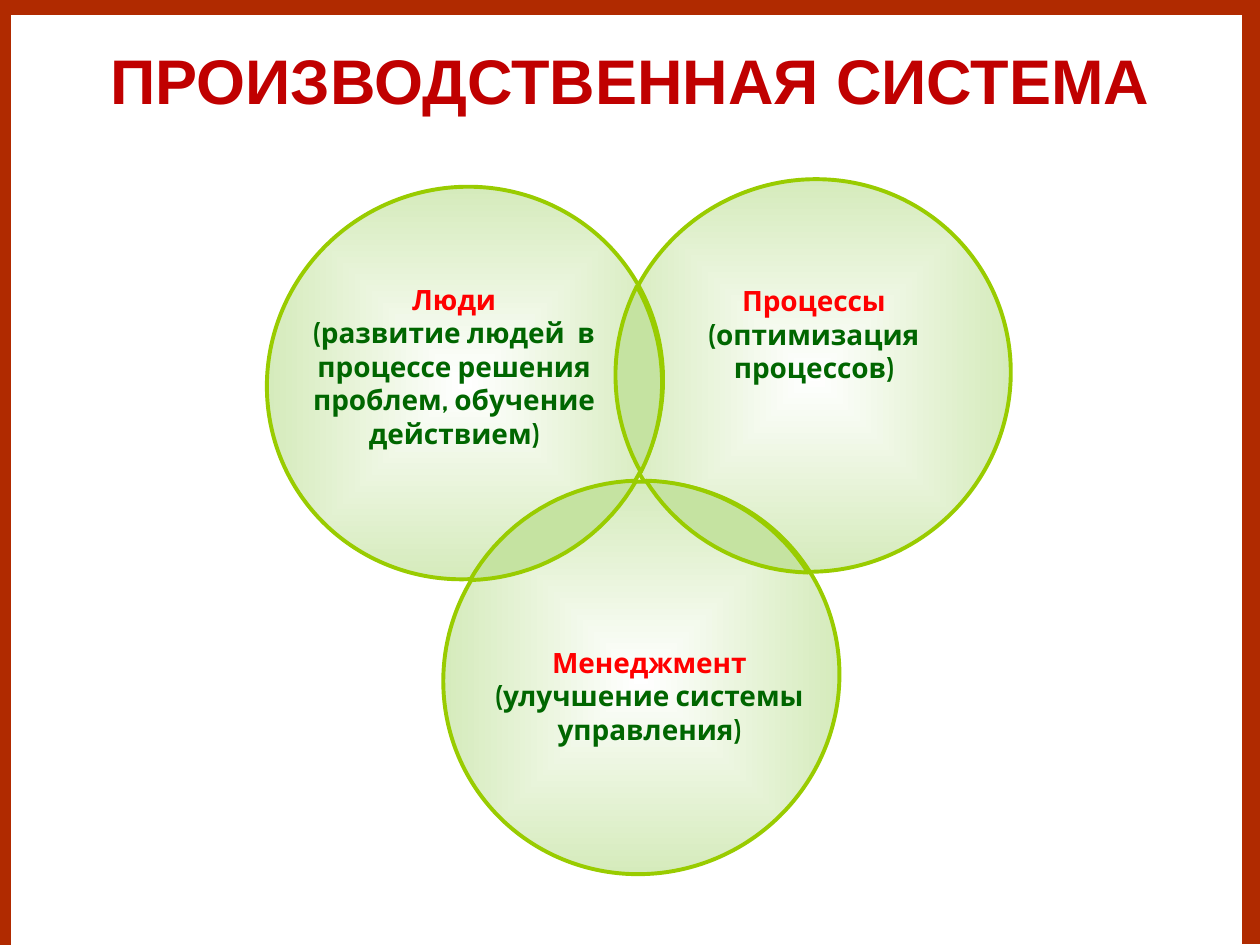
from math import atan2, acos, cos, hypot, pi, sin

from lxml.etree import SubElement
from pptx import Presentation
from pptx.dml.color import RGBColor
from pptx.enum.shapes import MSO_CONNECTOR, MSO_SHAPE
from pptx.enum.text import MSO_ANCHOR, PP_ALIGN
from pptx.oxml import parse_xml
from pptx.oxml.ns import nsdecls, qn
from pptx.util import Inches, Pt

RUST, LIME, PALE = "B02A00", "99CC00", "C5E3A1"
WIDE, HIGH = 3.1, 3.16
STEPS = 20


def color(code):
    return RGBColor.from_string(code)


def arc(near, far):
    """Points of the circle around near that lie inside the one around far."""
    dx, dy = far[0] - near[0], far[1] - near[1]
    rad = (WIDE + HIGH) / 4
    mid, half = atan2(dy, dx), acos(hypot(dx, dy) / 2 / rad)
    turns = [mid - half + 2 * half * i / STEPS for i in range(STEPS)]
    return [(Inches(near[0] + rad * cos(t)), Inches(near[1] + rad * sin(t)))
            for t in turns]


prs = Presentation()
prs.slide_width, prs.slide_height = Inches(10), Inches(7.5)
slide = prs.slides.add_slide(prs.slide_layouts[5])
shapes = slide.shapes

# Frame
for x1, y1, x2, y2 in [(0, 0.05, 10, 0.05), (0.02, 0.08, 0.02, 7.5),
                       (9.93, 0.08, 9.93, 7.49)]:
    edge = shapes.add_connector(MSO_CONNECTOR.STRAIGHT, Inches(x1), Inches(y1),
                                Inches(x2), Inches(y2))
    edge.line.color.rgb = color(RUST)
    edge.line.width = Pt(10)
    SubElement(edge._element.spPr, qn("a:effectLst"))

# Title with a text shadow
title = shapes.title
title.left, title.top = Inches(0), Inches(0.21)
title.width, title.height = Inches(10), Inches(0.84)
frame = title.text_frame
frame.text = "ПРОИЗВОДСТВЕННАЯ СИСТЕМА"
frame.vertical_anchor = MSO_ANCHOR.MIDDLE
frame.paragraphs[0].alignment = PP_ALIGN.CENTER
run = frame.paragraphs[0].runs[0]
run.font.name, run.font.size, run.font.bold = "Arial", Pt(36), True
run.font.color.rgb = color("C00000")
run._r.rPr.find(qn("a:solidFill")).addnext(parse_xml(
    f'<a:effectLst {nsdecls("a")}><a:outerShdw blurRad="38100" dist="38100" '
    'dir="2700000" algn="tl"><a:srgbClr val="000000"><a:alpha val="43000"/>'
    '</a:srgbClr></a:outerShdw></a:effectLst>'))

# Circles, by centre
right, left, low = (6.45, 2.98), (3.69, 3.04), (5.09, 5.38)
for x, y in (right, left, low):
    disc = shapes.add_shape(MSO_SHAPE.OVAL, Inches(x - WIDE / 2),
                            Inches(y - HIGH / 2), Inches(WIDE), Inches(HIGH))
    disc.rotation = 59.2
    disc.shadow.inherit = False
    disc.fill.gradient()
    for stop, code in zip(disc.fill.gradient_stops, ("FFFFFF", PALE)):
        stop.color.rgb = color(code)
    grad = disc._element.spPr.find(qn("a:gradFill"))
    grad.set("rotWithShape", "0")
    grad.replace(grad.find(qn("a:lin")), parse_xml(
        f'<a:path {nsdecls("a")} path="shape"><a:fillToRect l="50000" '
        't="50000" r="50000" b="50000"/></a:path>'))
    disc.line.color.rgb = color(LIME)
    disc.line.width = Pt(2.25)

# Labels
labels = [
    (2.12, 2.23, 2.97, 1.35, "Люди",
     "(развитие людей  в процессе решения проблем, обучение действием)"),
    (3.72, 5.08, 2.87, 0.88, "Менеджмент", "(улучшение системы управления)"),
    (5.02, 2.21, 2.88, 0.88, "Процессы", "(оптимизация процессов)"),
]
for x, y, w, h, head, note in labels:
    box = shapes.add_textbox(Inches(x), Inches(y), Inches(w), Inches(h))
    frame = box.text_frame
    frame.word_wrap = True
    frame.vertical_anchor = MSO_ANCHOR.MIDDLE
    frame.margin_left = frame.margin_right = 0
    frame.margin_top = frame.margin_bottom = 0
    frame.text = f"{head}\n{note}"
    for para, code in zip(frame.paragraphs, ("FF0000", "006600")):
        para.alignment = PP_ALIGN.CENTER
        font = para.runs[0].font
        font.name, font.size, font.bold = "Cabin", Pt(16), True
        font.color.rgb = color(code)

# Overlaps of the circles
for one, two in [(left, low), (right, low), (left, right)]:
    points = arc(one, two) + arc(two, one)
    path = shapes.build_freeform(*points[0])
    path.add_line_segments(points[1:], close=True)
    lens = path.convert_to_shape()
    lens.shadow.inherit = False
    lens.fill.solid()
    lens.fill.fore_color.rgb = color(PALE)
    lens.line.color.rgb = color(LIME)
    lens.line.width = Pt(2.25)

prs.save("out.pptx")
